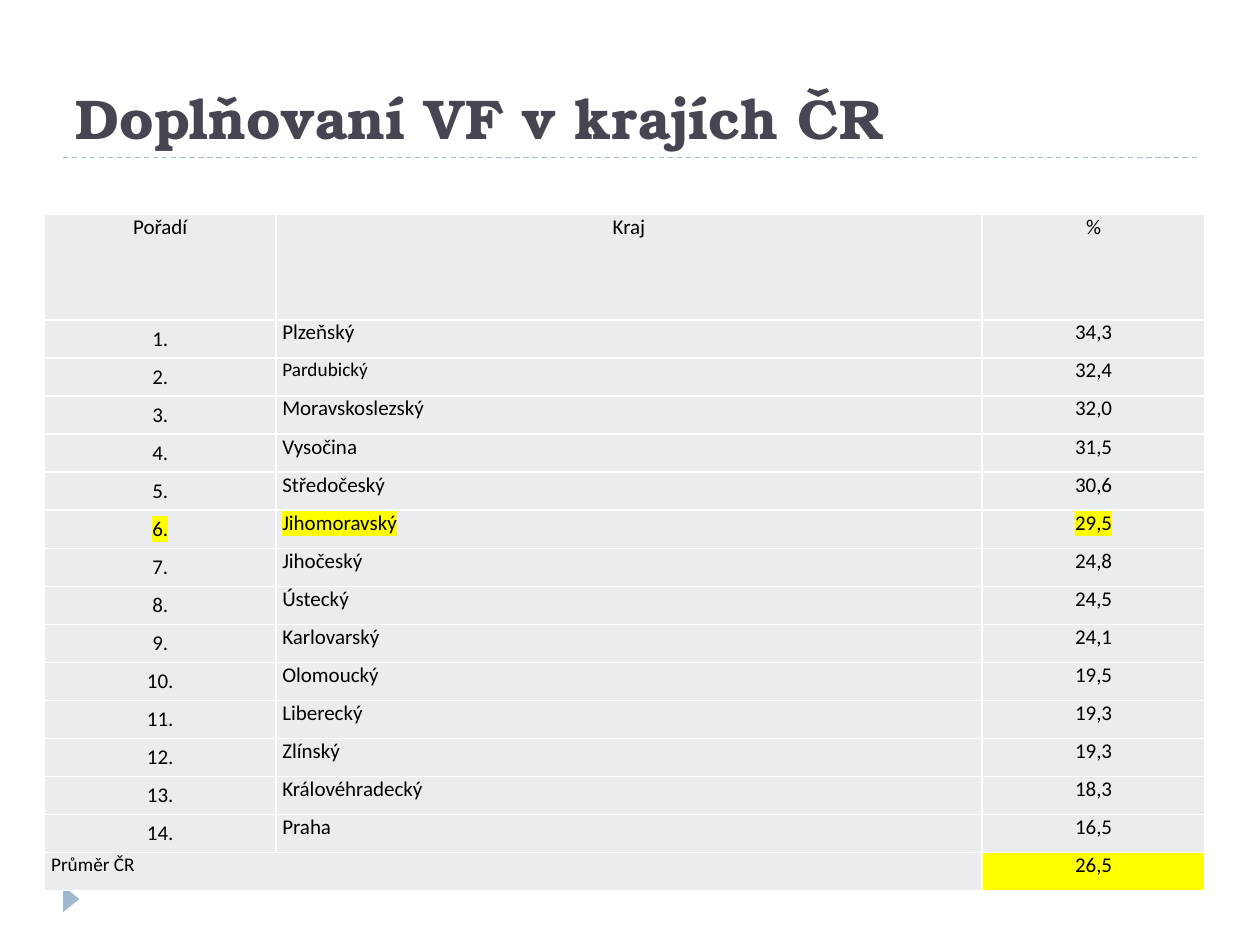
from lxml import etree
from pptx import Presentation
from pptx.dml.color import RGBColor
from pptx.enum.dml import MSO_LINE
from pptx.enum.shapes import MSO_CONNECTOR, MSO_SHAPE
from pptx.enum.text import MSO_ANCHOR, MSO_AUTO_SIZE, PP_ALIGN
from pptx.oxml.ns import qn
from pptx.util import Cm, Pt

LEFT, CENTER = PP_ALIGN.LEFT, PP_ALIGN.CENTER
TOP, MIDDLE, BOTTOM = MSO_ANCHOR.TOP, MSO_ANCHOR.MIDDLE, MSO_ANCHOR.BOTTOM
DASH = MSO_LINE.DASH

# Content
TITLE = "Doplňovaní VF v krajích ČR"
HEAD = ("Pořadí", "Kraj", "%")
REGIONS = [
    ("Plzeňský", "34,3"),
    ("Pardubický", "32,4"),
    ("Moravskoslezský", "32,0"),
    ("Vysočina", "31,5"),
    ("Středočeský", "30,6"),
    ("Jihomoravský", "29,5"),
    ("Jihočeský", "24,8"),
    ("Ústecký", "24,5"),
    ("Karlovarský", "24,1"),
    ("Olomoucký", "19,5"),
    ("Liberecký", "19,3"),
    ("Zlínský", "19,3"),
    ("Královéhradecký", "18,3"),
    ("Praha", "16,5"),
]
MEAN = ("Průměr ČR", "26,5")
MARKED = "Jihomoravský"
SMALL = ("Pardubický", "Průměr ČR")

# Look and sizes (cm)
BLUE, DARK, GREY = "9FB8CD", "464653", "EBECF0"
YELLOW, WHITE, BLACK = "FFFF00", "FFFFFF", "000000"
COLS = (4.66, 14.24, 4.49)
HEAD_H, TABLE_H = 2.13, 13.64
ROW_H = (TABLE_H - HEAD_H) / (len(REGIONS) + 1)


def rgb(code):
    return RGBColor.from_string(code)


def add_run(par, text, font, size, color, bold=False):
    run = par.add_run()
    run.text = text
    run.font.name = font
    run.font.size = Pt(size)
    run.font.bold = bold
    run.font.color.rgb = rgb(color)
    return run


def mark(run, color):
    fill = run._r.rPr.find(qn("a:solidFill"))
    light = etree.Element(qn("a:highlight"))
    etree.SubElement(light, qn("a:srgbClr"), val=color)
    fill.addnext(light)


def set_edges(cell, color):
    props = cell._tc.get_or_add_tcPr()
    for i, side in enumerate(("a:lnL", "a:lnR", "a:lnT", "a:lnB")):
        edge = etree.Element(qn(side), w=str(Pt(1)))
        fill = etree.SubElement(edge, qn("a:solidFill"))
        etree.SubElement(fill, qn("a:srgbClr"), val=color)
        props.insert(i, edge)


def fill_cell(cell, text, align, anchor=TOP, fill=GREY, marked=False):
    cell.fill.solid()
    cell.fill.fore_color.rgb = rgb(fill)
    cell.margin_left = cell.margin_right = Cm(0.13)
    cell.margin_top = cell.margin_bottom = 0
    cell.vertical_anchor = anchor
    par = cell.text_frame.paragraphs[0]
    par.alignment = align
    run = add_run(par, text, "Calibri", 11 if text in SMALL else 12, BLACK)
    if marked:
        mark(run, YELLOW)


deck = Presentation()
deck.slide_width, deck.slide_height = Cm(25.4), Cm(19.05)
slide = deck.slides.add_slide(deck.slide_layouts[5])
shapes = slide.shapes

# Title
title = shapes.title
title.left, title.top = Cm(1.27), Cm(0.43)
title.width, title.height = Cm(22.86), Cm(2.74)
frame = title.text_frame
frame.word_wrap = True
frame.auto_size = MSO_AUTO_SIZE.NONE
frame.vertical_anchor = BOTTOM
frame.paragraphs[0].alignment = LEFT
add_run(frame.paragraphs[0], TITLE, "TeX Gyre Bonum", 32, DARK, True)

# Dashed rule under the title
rule = shapes.add_connector(MSO_CONNECTOR.STRAIGHT,
                            Cm(1.27), Cm(3.18), Cm(24.13), Cm(3.18))
rule.line.color.rgb = rgb(BLUE)
rule.line.width = Pt(0.75)
rule.line.dash_style = DASH
etree.SubElement(rule._element.spPr, qn("a:effectLst"))

# Corner arrow
arrow = shapes.add_shape(MSO_SHAPE.ISOSCELES_TRIANGLE,
                         Cm(1.17), Cm(17.96), Cm(0.53), Cm(0.33))
arrow.rotation = 90
arrow.shadow.inherit = False
arrow.fill.solid()
arrow.fill.fore_color.rgb = rgb(BLUE)
arrow.line.fill.background()

# Table grid
last = len(REGIONS) + 1
table = shapes.add_table(last + 1, len(COLS), Cm(0.9), Cm(4.32),
                         Cm(sum(COLS)), Cm(TABLE_H)).table
table.first_row = table.horz_banding = False
for col, width in zip(table.columns, COLS):
    col.width = Cm(width)
for i, row in enumerate(table.rows):
    row.height = Cm(ROW_H if i else HEAD_H)

# Table text
for i, text in enumerate(HEAD):
    fill_cell(table.cell(0, i), text, CENTER)
for i, (name, share) in enumerate(REGIONS, 1):
    hit = name == MARKED
    fill_cell(table.cell(i, 0), f"{i}.", CENTER, MIDDLE, marked=hit)
    fill_cell(table.cell(i, 1), name, LEFT, marked=hit)
    fill_cell(table.cell(i, 2), share, CENTER, marked=hit)
table.cell(last, 0).merge(table.cell(last, 1))
fill_cell(table.cell(last, 0), MEAN[0], LEFT)
fill_cell(table.cell(last, 2), MEAN[1], CENTER, fill=YELLOW)
for cell in table.iter_cells():
    set_edges(cell, WHITE)

deck.save("out.pptx")
